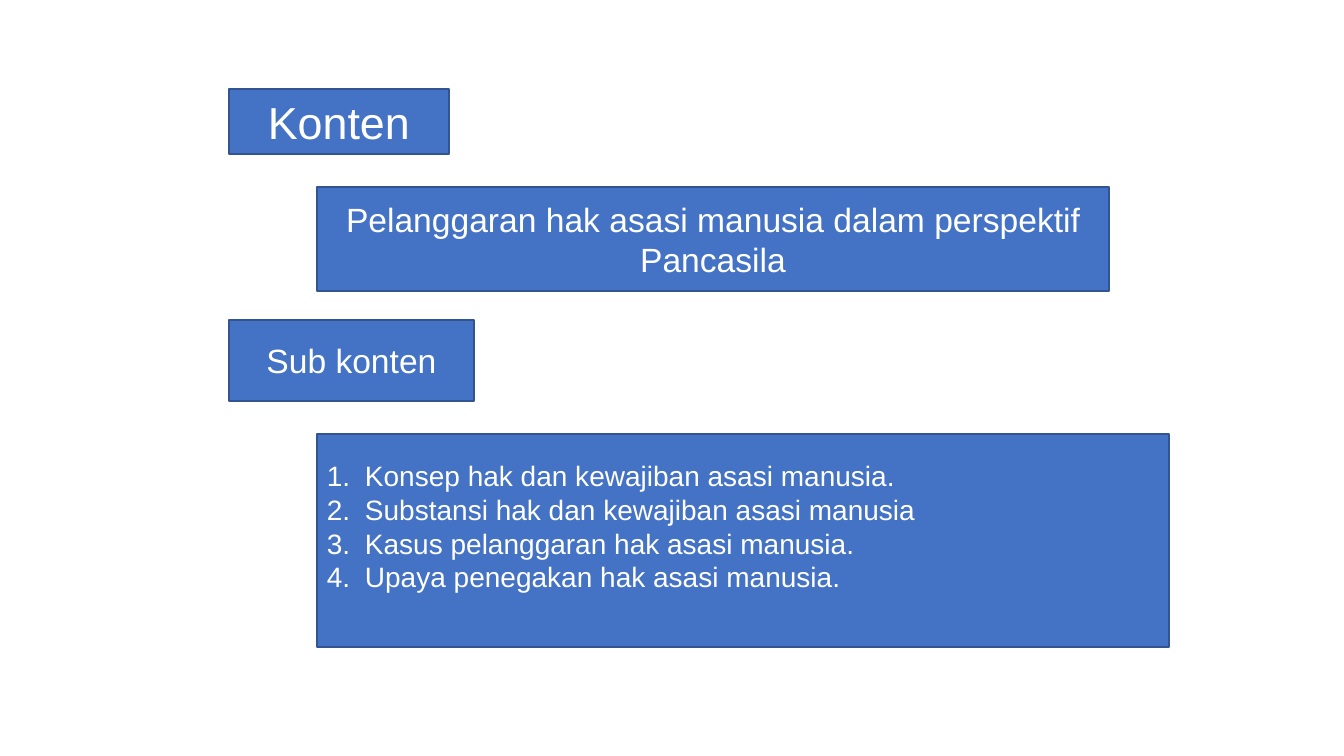
from pptx import Presentation
from pptx.dml.color import RGBColor
from pptx.enum.shapes import MSO_SHAPE
from pptx.enum.text import MSO_ANCHOR, PP_ALIGN
from pptx.oxml.ns import qn
from pptx.util import Pt
from lxml import etree

RECTANGLE = MSO_SHAPE.RECTANGLE
MIDDLE = MSO_ANCHOR.MIDDLE
LEFT, CENTER = PP_ALIGN.LEFT, PP_ALIGN.CENTER

SLIDE_SIZE = (1344, 756)
FONT = "Arial"
BLUE, DARK_BLUE, WHITE = "4472C4", "325491", "FFFFFF"
HEADING_LEFT, DETAIL_LEFT = 229, 317
LIST_INDENT = 38
LIST_BOTTOM_INSET = 34

# left, top, width, height, text size, lines
HEADINGS_AND_DETAILS = [
    (HEADING_LEFT, 89, 220, 65, 32, ["Konten"]),
    (DETAIL_LEFT, 187, 792, 104, 24,
     ["Pelanggaran hak asasi manusia dalam perspektif Pancasila"]),
    (HEADING_LEFT, 320, 245, 81, 24, ["Sub konten"]),
]
SUBTOPICS = (DETAIL_LEFT, 434, 852, 213, 20, [
    "Konsep hak dan kewajiban asasi manusia.",
    "Substansi hak dan kewajiban asasi manusia",
    "Kasus pelanggaran hak asasi manusia.",
    "Upaya penegakan hak asasi manusia.",
])


def px(length):
    return round(length * 914400 / 100.8)


def color(hex_code):
    return RGBColor.from_string(hex_code)


def number_paragraph(paragraph):
    """Give the paragraph an automatic number and a hanging indent."""
    properties = paragraph._p.get_or_add_pPr()
    properties.set("marL", str(px(LIST_INDENT)))
    properties.set("indent", str(-px(LIST_INDENT)))
    etree.SubElement(properties, qn("a:buFont"), typeface=FONT)
    etree.SubElement(properties, qn("a:buAutoNum"), type="arabicPeriod")


def add_box(slide, left, top, width, height, size, lines, numbered=False):
    box = slide.shapes.add_shape(RECTANGLE, px(left), px(top), px(width), px(height))
    box.shadow.inherit = False
    box.fill.solid()
    box.fill.fore_color.rgb = color(BLUE)
    box.line.color.rgb = color(DARK_BLUE)
    box.line.width = Pt(1)
    frame = box.text_frame
    frame.word_wrap = True
    frame.vertical_anchor = MIDDLE
    if numbered:
        frame.margin_bottom = px(LIST_BOTTOM_INSET)
    for index, line in enumerate(lines):
        paragraph = frame.add_paragraph() if index else frame.paragraphs[0]
        paragraph.alignment = LEFT if numbered else CENTER
        if numbered:
            number_paragraph(paragraph)
        run = paragraph.add_run()
        run.text = line
        run.font.name = FONT
        run.font.size = Pt(size)
        run.font.color.rgb = color(WHITE)


def main():
    presentation = Presentation()
    presentation.slide_width, presentation.slide_height = map(px, SLIDE_SIZE)
    slide = presentation.slides.add_slide(presentation.slide_layouts[6])
    for box in HEADINGS_AND_DETAILS:
        add_box(slide, *box)
    add_box(slide, *SUBTOPICS, numbered=True)
    presentation.save("out.pptx")


if __name__ == "__main__":
    main()
